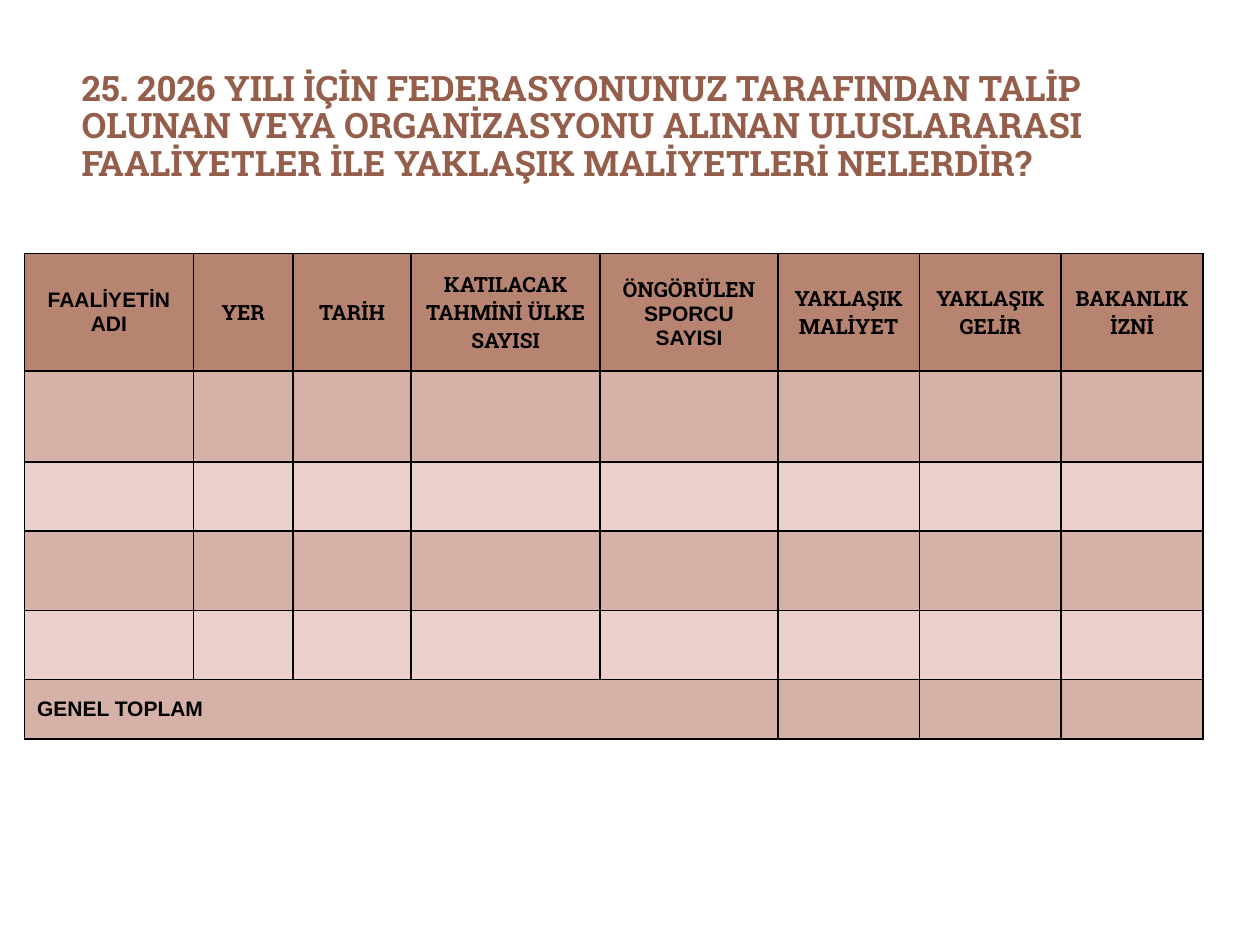
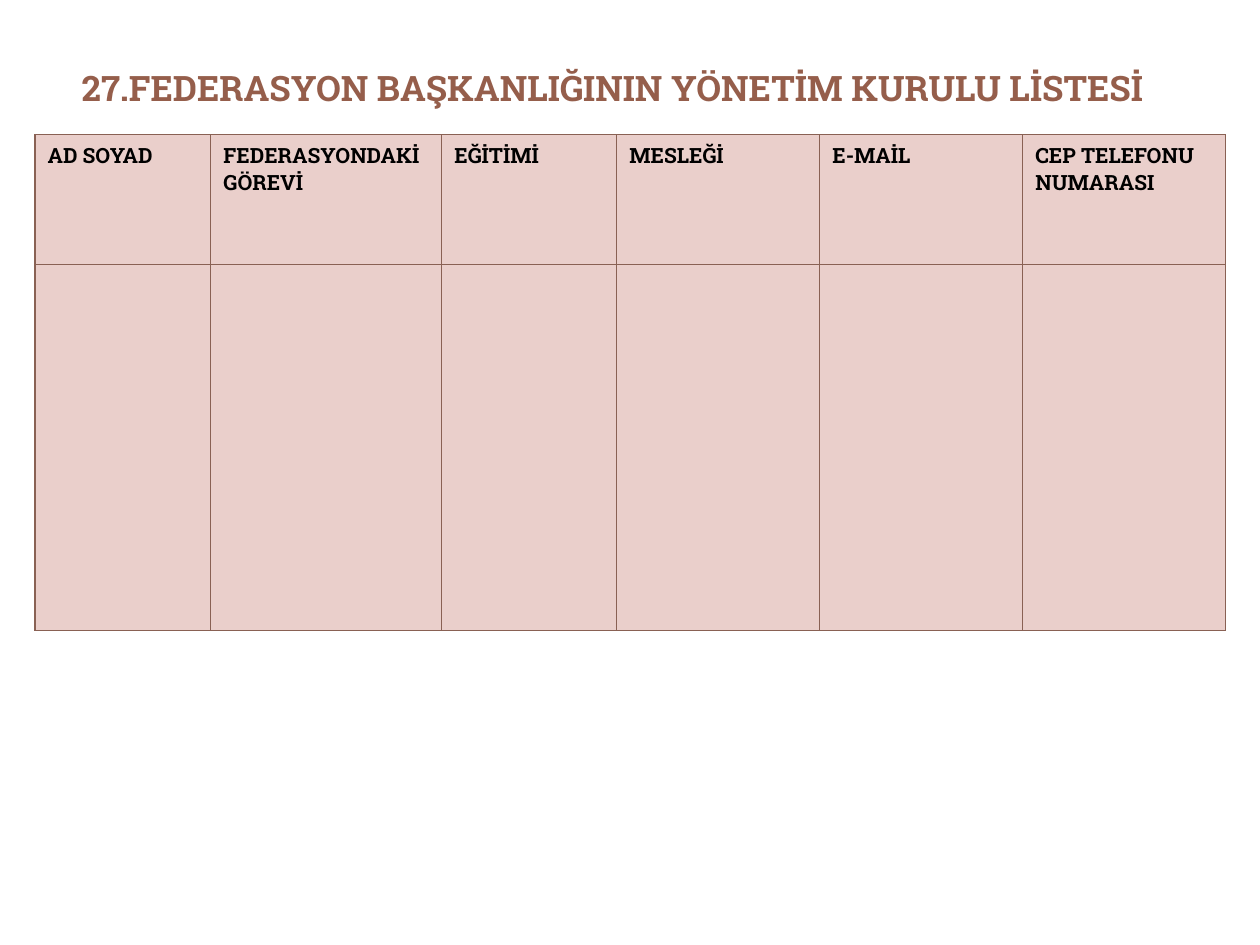
from dataclasses import dataclass

from lxml import etree
from pptx import Presentation
from pptx.dml.color import RGBColor
from pptx.enum import text
from pptx.oxml import ns
from pptx.util import Pt


@dataclass(frozen=True)
class Theme:
    slab: str = "Roboto Slab"
    sans: str = "Arial"
    title: str = "955E4B"
    ink: str = "000000"
    head: str = "B88472"
    dark: str = "D5B1A7"
    light: str = "EACFCB"
    rule: str = "896154"
    title_size: float = 20
    cell_size: float = 12


T = Theme()
ALIGN, ANCHOR = text.PP_ALIGN, text.MSO_ANCHOR


def style(run, font, size, color):
    run.font.name = font
    run.font.size = Pt(size)
    run.font.bold = True
    run.font.color.rgb = RGBColor.from_string(color)


def add_title(slide, words, box):
    title = slide.shapes.title
    title.left, title.top, title.width, title.height = map(Pt, box)
    frame = title.text_frame
    frame.text = words
    frame.word_wrap = True
    frame.auto_size = text.MSO_AUTO_SIZE.NONE
    frame.vertical_anchor = ANCHOR.TOP
    frame.margin_left = frame.margin_right = Pt(7.2)
    frame.margin_top, frame.margin_bottom = Pt(29.5), Pt(3.6)
    para = frame.paragraphs[0]
    para.alignment = ALIGN.LEFT
    para.line_spacing = 0.9
    style(para.runs[0], T.slab, T.title_size, T.title)


def set_edges(cell, color, width):
    props = cell._tc.get_or_add_tcPr()
    for side in ("lnL", "lnR", "lnT", "lnB"):
        line = etree.SubElement(props, ns.qn(f"a:{side}"), w=str(Pt(width)))
        fill = etree.SubElement(line, ns.qn("a:solidFill"))
        etree.SubElement(fill, ns.qn("a:srgbClr"), val=color)


def add_grid(slide, spot, cols, rows, fills, edge, width):
    """Add an empty table with one fill per row and the same edge throughout."""
    left, top = spot
    frame = slide.shapes.add_table(len(rows), len(cols), Pt(left), Pt(top),
                                   Pt(sum(cols)), Pt(sum(rows)))
    table = frame.table
    for col, size in zip(table.columns, cols):
        col.width = Pt(size)
    for row, size, fill in zip(table.rows, rows, fills):
        row.height = Pt(size)
        for cell in row.cells:
            set_edges(cell, edge, width)
            cell.fill.solid()
            cell.fill.fore_color.rgb = RGBColor.from_string(fill)
    return table


def write(cell, parts, align=ALIGN.LEFT, anchor=ANCHOR.TOP):
    """Fill a cell with (words, font) parts."""
    para = cell.text_frame.paragraphs[0]
    para.alignment = align
    cell.vertical_anchor = anchor
    for words, font in parts:
        run = para.add_run()
        run.text = words
        style(run, font, T.cell_size, T.ink)


def add_events(slide, spot):
    heads = [
        [("FAALİYETİN ADI", T.sans)],
        [("YER", T.slab)],
        [("TARİH", T.slab)],
        [("KATILACAK TAHMİNİ ÜLKE SAYISI", T.slab)],
        [("ÖNGÖRÜLEN ", T.slab), ("SPORCU SAYISI", T.sans)],
        [("YAKLAŞIK MALİYET", T.slab)],
        [("YAKLAŞIK GELİR", T.slab)],
        [("BAKANLIK İZNİ", T.slab)],
    ]
    cols = [96.5, 57, 67.5, 108, 101.5] + [81] * 3
    rows = [67, 52, 39.5, 45.5, 39.5, 34]
    fills = [T.head] + [T.dark, T.light] * 2 + [T.dark]
    table = add_grid(slide, spot, cols, rows, fills, T.ink, 1)
    for col, parts in enumerate(heads):
        write(table.cell(0, col), parts, ALIGN.CENTER, ANCHOR.MIDDLE)
    total = table.cell(5, 0)
    total.merge(table.cell(5, 4))
    write(total, [("GENEL TOPLAM", T.sans)], anchor=ANCHOR.MIDDLE)


def add_board(slide, spot):
    heads = ["AD SOYAD", "FEDERASYONDAKİ GÖREVİ", "EĞİTİMİ", "MESLEĞİ",
             "E-MAİL", "CEP TELEFONU NUMARASI"]
    cols = [100.5, 132, 100] + [116] * 3
    table = add_grid(slide, spot, cols, [74, 209.5], [T.light] * 2,
                     T.rule, 0.75)
    for col, words in enumerate(heads):
        write(table.cell(0, col), [(words, T.slab)])


def main():
    deck = Presentation()
    deck.slide_width, deck.slide_height = Pt(720), Pt(540)
    pages = [
        ("25. 2026 YILI İÇİN FEDERASYONUNUZ TARAFINDAN TALİP OLUNAN VEYA "
         "ORGANİZASYONU ALINAN ULUSLARARASI FAALİYETLER İLE YAKLAŞIK "
         "MALİYETLERİ NELERDİR?", 106, add_events, (14, 145)),
        ("27.FEDERASYON BAŞKANLIĞININ YÖNETİM KURULU LİSTESİ",
         66, add_board, (20, 77)),
    ]
    for words, height, body, spot in pages:
        slide = deck.slides.add_slide(deck.slide_layouts[5])
        add_title(slide, words, (39.5, 11, 648, height))
        body(slide, spot)
    deck.save("out.pptx")


if __name__ == "__main__":
    main()
